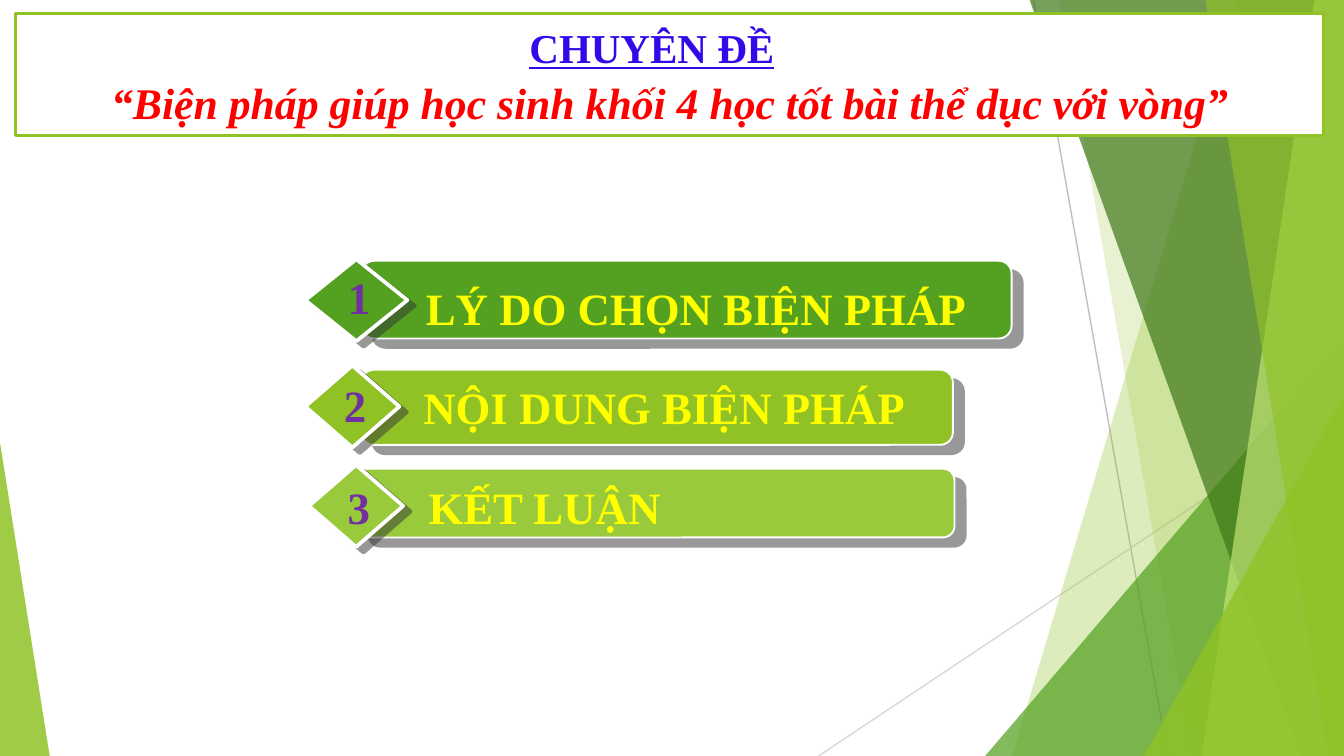
import pptx
import pptx.dml.color
import pptx.enum.shapes
import pptx.enum.text
import pptx.oxml
import pptx.oxml.ns
import pptx.util
from lxml import etree

Cm = pptx.util.Cm
Pt = pptx.util.Pt
RGBColor = pptx.dml.color.RGBColor
Shape = pptx.enum.shapes.MSO_SHAPE
Align = pptx.enum.text.PP_ALIGN
Anchor = pptx.enum.text.MSO_ANCHOR
qn = pptx.oxml.ns.qn

WIDTH, HEIGHT = 25.4, 14.29
WHITE = RGBColor(0xFF, 0xFF, 0xFF)
LEAF = RGBColor(0x90, 0xC2, 0x26)
GREEN = RGBColor(0x54, 0xA0, 0x21)
FOREST = RGBColor(0x3F, 0x78, 0x19)
PALE = RGBColor(0xC0, 0xE4, 0x74)
LIME = RGBColor(0x99, 0xCA, 0x3C)
GREY = RGBColor(0xBF, 0xBF, 0xBF)
LIGHT_GREY = RGBColor(0xD9, 0xD9, 0xD9)
SHADOW = RGBColor(0x33, 0x33, 0x33)
YELLOW = RGBColor(0xFF, 0xFF, 0x00)
PURPLE = RGBColor(0x70, 0x30, 0xA0)
RED = RGBColor(0xFF, 0x00, 0x00)
BLUE = RGBColor(0x34, 0x09, 0xE9)


def write_text(frame, text, size=24, color=YELLOW, align=Align.LEFT,
               anchor=Anchor.MIDDLE, italic=False, underline=False,
               bottom=0.08, font="Times New Roman"):
    frame.word_wrap = True
    frame.vertical_anchor = anchor
    frame.margin_left = frame.margin_right = Cm(0.15)
    frame.margin_top, frame.margin_bottom = Cm(0.08), Cm(bottom)
    paragraph = frame.paragraphs[0]
    paragraph.alignment = align
    run = paragraph.add_run()
    run.text = text
    run.font.name, run.font.size = font, Pt(size)
    run.font.bold, run.font.italic, run.font.underline = True, italic, underline
    run.font.color.rgb = color


class Deck:
    """Holds the presentation, its style and the current slide."""

    def __init__(self):
        self.presentation = pptx.Presentation()
        self.presentation.slide_width = Cm(WIDTH)
        self.presentation.slide_height = Cm(HEIGHT)
        self.slide = self.presentation.slides.add_slide(
            self.presentation.slide_layouts[6])
        self.shapes = self.slide.shapes

    def paint(self, shape, fill, opacity=100, line=None, weight=1):
        shape.shadow.inherit = False
        shape.fill.solid()
        shape.fill.fore_color.rgb = fill
        if opacity < 100:
            tint = shape._element.spPr.find(qn("a:solidFill"))[0]
            etree.SubElement(tint, qn("a:alpha"), val=str(opacity * 1000))
        if line is None:
            shape.line.fill.background()
        else:
            shape.line.color.rgb = line
            shape.line.width = Pt(weight)
        return shape

    def block(self, kind, box, fill, adjust=None, **style):
        shape = self.shapes.add_shape(kind, *map(Cm, box))
        if adjust is not None:
            shape.adjustments[0] = adjust
        return self.paint(shape, fill, **style)

    def facet(self, top_left, bottom_left, fill, opacity):
        outline = self.shapes.build_freeform(Cm(top_left), 0)
        outline.add_line_segments(
            [(Cm(x), Cm(y)) for x, y in
             ((WIDTH, 0), (WIDTH, HEIGHT), (bottom_left, HEIGHT))], close=True)
        self.paint(outline.convert_to_shape(), fill, opacity)

    def ray(self, ends, color):
        line = self.shapes.add_connector(
            pptx.enum.shapes.MSO_CONNECTOR.STRAIGHT, *map(Cm, ends))
        line.line.color.rgb = color
        line.line.width = Pt(0.75)
        etree.SubElement(line._element.spPr, qn("a:effectLst"))

    def cast_shadow(self, shape, distance, angle):
        effects = shape._element.spPr.find(qn("a:effectLst"))
        outer = etree.SubElement(
            effects, qn("a:outerShdw"), blurRad="0", dist=str(Pt(distance)),
            dir=str(angle * 60000), algn="ctr", rotWithShape="0")
        tint = etree.SubElement(outer, qn("a:srgbClr"), val=str(SHADOW))
        etree.SubElement(tint, qn("a:alpha"), val="50000")

    def text(self, box, text, **style):
        write_text(self.shapes.add_textbox(*map(Cm, box)).text_frame, text, **style)

    def agenda_item(self, number, title, fill, bar, diamond, label_left, label_top,
                    number_top):
        banner = self.block(Shape.ROUNDED_RECTANGLE, bar, fill, 0.167, line=WHITE)
        self.cast_shadow(banner, 7.8, 40)
        marker = self.block(Shape.DIAMOND, diamond, fill, line=WHITE, weight=2)
        self.cast_shadow(marker, 5, 37)
        self.text((label_left, label_top, 11.4, 1.17), title)
        center = diamond[0] + diamond[2] / 2 + 0.05
        self.text((center - 0.4, number_top, 0.8, 1.17), str(number),
                  color=PURPLE, align=Align.CENTER)


deck = Deck()
deck.ray((19.53, 0, 22.07, HEIGHT), GREY)
deck.ray((WIDTH, 7.67, 15.47, HEIGHT), LIGHT_GREY)
deck.facet(23.39, 19.13, LEAF, 30)
deck.facet(20.02, 22.53, LEAF, 20)
deck.block(Shape.ISOSCELES_TRIANGLE, (18.62, 6.35, 6.78, 7.94), GREEN, 1, opacity=72)
deck.facet(19.46, 24.59, FOREST, 70)
deck.facet(24.84, 22.71, PALE, 70)
deck.facet(22.78, 25.1, LEAF, 65)
deck.block(Shape.ISOSCELES_TRIANGLE, (21.62, 7.47, 3.78, 6.82), LEAF, 1, opacity=80)
deck.block(Shape.ISOSCELES_TRIANGLE, (0, 8.36, 0.94, 5.93), LEAF, 0, opacity=85)

agenda = [
    ("LÝ DO CHỌN BIỆN PHÁP", GREEN, (6.83, 4.93, 12.29, 1.47),
     (5.77, 4.9, 1.93, 1.55), 7.9, 5.23, 5.03),
    ("NỘI DUNG BIỆN PHÁP", LEAF, (6.83, 6.99, 11.18, 1.42),
     (5.77, 6.91, 1.78, 1.55), 7.85, 7.11, 7.06),
    ("KẾT LUẬN", LIME, (6.76, 8.86, 11.28, 1.3),
     (5.84, 8.79, 1.78, 1.55), 7.95, 8.99, 8.99),
]
for number, item in enumerate(agenda, 1):
    deck.agenda_item(number, *item)

topic = deck.block(Shape.RECTANGLE, (0.3, 0.25, 24.71, 2.31), WHITE,
                   line=LEAF, weight=1.5)
write_text(topic.text_frame,
           "“Biện pháp giúp học sinh khối 4 học tốt bài thể dục với vòng”",
           size=23.4, color=RED, align=Align.CENTER, anchor=Anchor.BOTTOM,
           italic=True, bottom=0.13)
deck.text((9.73, 0.38, 5.18, 1.02), "CHUYÊN ĐỀ", size=22, color=BLUE,
          align=Align.CENTER, underline=True)
deck.presentation.save("out.pptx")
